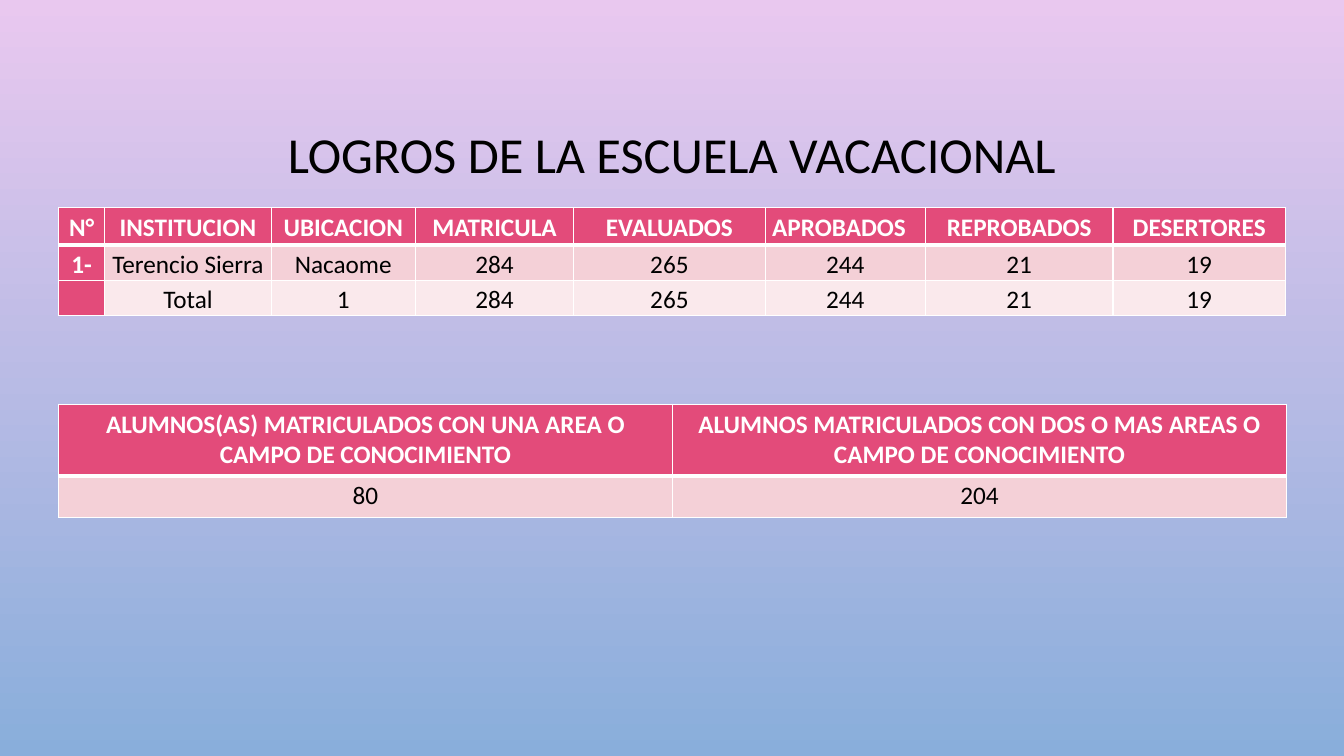
from dataclasses import dataclass

from lxml.etree import SubElement
from pptx import Presentation
from pptx.dml.color import RGBColor
from pptx.enum.text import MSO_ANCHOR, PP_ALIGN
from pptx.oxml.ns import qn
from pptx.slide import Slide
from pptx.table import _Cell
from pptx.util import Inches, Pt

FONT = "Calibri"
BLACK = RGBColor(0x00, 0x00, 0x00)
WHITE = RGBColor(0xFF, 0xFF, 0xFF)
HEADER = RGBColor(0xE3, 0x4B, 0x7A)
BANDS = (RGBColor(0xF4, 0xD0, 0xD7), RGBColor(0xFA, 0xE9, 0xEC))
SKY = (RGBColor(0xE9, 0xC8, 0xEF), RGBColor(0x89, 0xAE, 0xDB))
LEFT = 0.58


@dataclass(frozen=True)
class TableSpec:
    top: float
    widths: tuple[float, ...]
    heights: tuple[float, ...]
    rows: tuple[tuple[str, ...], ...]
    margin_x: float = 0.1
    margin_y: float = 0.05
    line_spacing: float = 1.0
    header_column: bool = False
    left_aligned: tuple[str, ...] = ()


TABLES = (
    TableSpec(
        top=2.06,
        widths=(0.46, 1.65, 1.43, 1.57, 1.9, 1.59, 1.86, 1.71),
        heights=(0.37, 0.35, 0.35),
        rows=(
            ("N°", "INSTITUCION", "UBICACION", "MATRICULA", "EVALUADOS",
             "APROBADOS", "REPROBADOS", "DESERTORES"),
            ("1-", "Terencio Sierra", "Nacaome", "284", "265", "244", "21", "19"),
            ("", "Total", "1", "284", "265", "244", "21", "19"),
        ),
        margin_x=0.07,
        margin_y=0,
        line_spacing=1.15,
        header_column=True,
        left_aligned=("APROBADOS",),
    ),
    TableSpec(
        top=4.01,
        widths=(6.09, 6.09),
        heights=(0.71, 0.41),
        rows=(
            ("ALUMNOS(AS) MATRICULADOS CON UNA AREA O CAMPO DE CONOCIMIENTO",
             "ALUMNOS MATRICULADOS CON DOS O MAS AREAS O CAMPO DE CONOCIMIENTO"),
            ("80", "204"),
        ),
    ),
)


def add_borders(cell: _Cell, row: int) -> None:
    """Draw white cell edges, thicker between the header and the first row."""
    widths = {"a:lnL": 1, "a:lnR": 1,
              "a:lnT": 3 if row == 1 else 1, "a:lnB": 3 if row == 0 else 1}
    tc_pr = cell._tc.get_or_add_tcPr()
    for tag, width in widths.items():
        line = SubElement(tc_pr, qn(tag), w=str(Pt(width)))
        fill = SubElement(line, qn("a:solidFill"))
        SubElement(fill, qn("a:srgbClr"), val=str(WHITE))


def format_cell(cell: _Cell, spec: TableSpec, row: int, col: int) -> None:
    is_header = row == 0 or (spec.header_column and col == 0)
    text = spec.rows[row][col]
    cell.margin_left = cell.margin_right = Inches(spec.margin_x)
    cell.margin_top = cell.margin_bottom = Inches(spec.margin_y)
    add_borders(cell, row)
    cell.fill.solid()
    cell.fill.fore_color.rgb = HEADER if is_header else BANDS[row - 1]
    if not text:
        return
    cell.text_frame.text = text
    p = cell.text_frame.paragraphs[0]
    p.alignment = PP_ALIGN.LEFT if text in spec.left_aligned else PP_ALIGN.CENTER
    p.line_spacing = spec.line_spacing
    font = p.runs[0].font
    font.name, font.size, font.bold = FONT, Pt(18), is_header
    font.color.rgb = WHITE if is_header else BLACK


def add_styled_table(s: Slide, spec: TableSpec) -> None:
    table = s.shapes.add_table(
        len(spec.heights), len(spec.widths), Inches(LEFT), Inches(spec.top),
        Inches(sum(spec.widths)), Inches(sum(spec.heights))).table
    table.first_col = spec.header_column
    for column, width in zip(table.columns, spec.widths):
        column.width = Inches(width)
    for i, height in enumerate(spec.heights):
        table.rows[i].height = Inches(height)
        for j in range(len(spec.widths)):
            format_cell(table.cell(i, j), spec, i, j)


def paint_background(s: Slide) -> None:
    fill = s.background.fill
    fill.gradient()
    fill.gradient_angle = 270
    for stop, color in zip(fill.gradient_stops, SKY):
        stop.color.rgb = color


def set_title(s: Slide, text: str) -> None:
    title = s.shapes.title
    title.left, title.top = Inches(1), Inches(0.68)
    title.width, title.height = Inches(11.33), Inches(1.75)
    tf = title.text_frame
    tf.text = text
    tf.vertical_anchor = MSO_ANCHOR.MIDDLE
    p = tf.paragraphs[0]
    p.alignment = PP_ALIGN.CENTER
    p.line_spacing = 0.9
    font = p.runs[0].font
    font.name, font.size = FONT, Pt(36)
    font.color.rgb = BLACK


def main() -> None:
    prs = Presentation()
    prs.slide_width, prs.slide_height = Inches(13.33), Inches(7.5)
    s = prs.slides.add_slide(prs.slide_layouts.get_by_name("Title Only"))
    paint_background(s)
    set_title(s, "LOGROS DE LA ESCUELA VACACIONAL")
    for spec in TABLES:
        add_styled_table(s, spec)
    prs.save("out.pptx")


if __name__ == "__main__":
    main()
